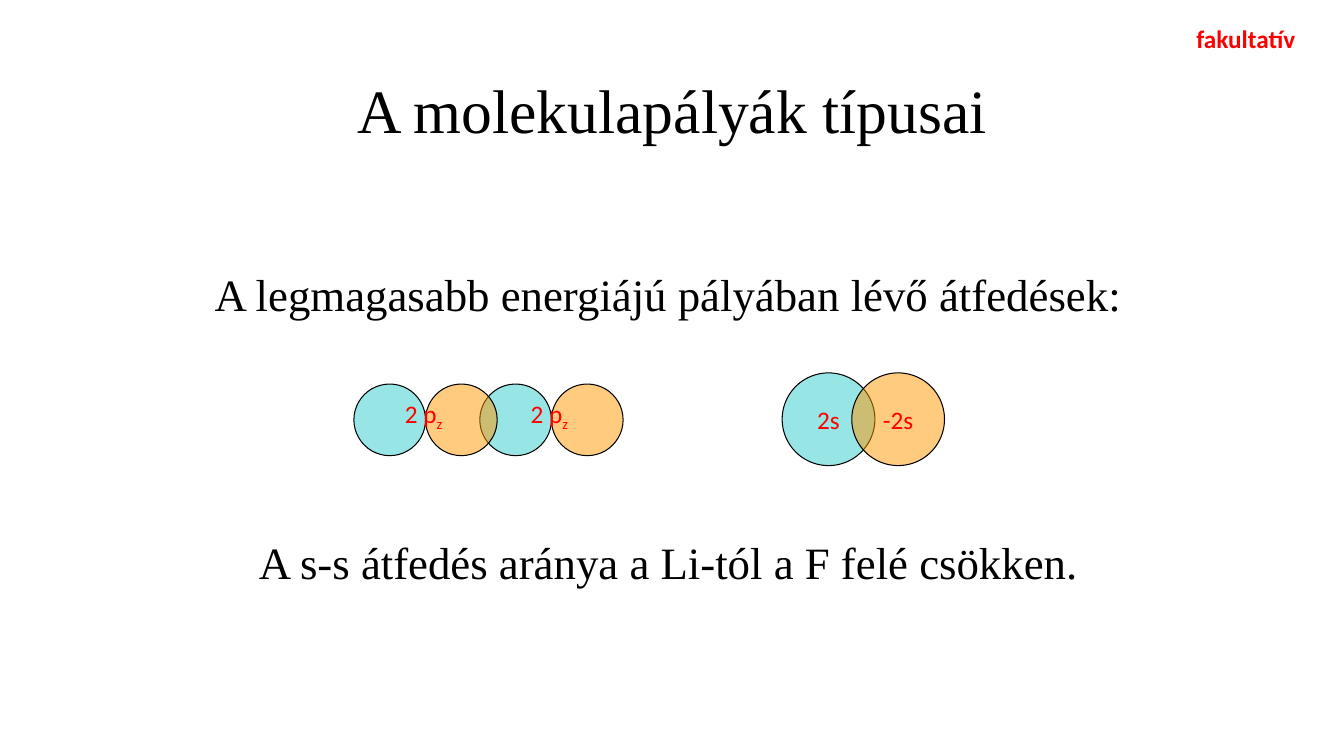
import pptx
import pptx.dml.color
import pptx.enum.shapes
import pptx.enum.text
import pptx.oxml.ns
import pptx.util
from lxml import etree

BLACK = pptx.dml.color.RGBColor(0x00, 0x00, 0x00)
RED = pptx.dml.color.RGBColor(0xFF, 0x00, 0x00)
TEAL = pptx.dml.color.RGBColor(0x33, 0xCC, 0xCC)
ORANGE = pptx.dml.color.RGBColor(0xFF, 0x99, 0x00)
ALIGN = pptx.enum.text.PP_ALIGN
ANCHOR = pptx.enum.text.MSO_ANCHOR


class OrbitalSlide:
    serif = "Times New Roman"
    sans = "Calibri"
    label_size = 18

    def __init__(self, presentation):
        self.width = presentation.slide_width
        self.height = presentation.slide_height
        self.slide = presentation.slides.add_slide(presentation.slide_layouts[5])

    def across(self, percent):
        return round(self.width * percent / 100)

    def down(self, percent):
        return round(self.height * percent / 100)

    def box(self, left, top, width, height):
        return self.across(left), self.down(top), self.across(width), self.down(height)

    def run(self, paragraph, text, font, size, color, bold=False):
        run = paragraph.add_run()
        run.text = text
        run.font.name = font
        run.font.size = pptx.util.Pt(size)
        run.font.bold = bold
        run.font.color.rgb = color
        return run

    def title(self, text, *place):
        shape = self.slide.shapes.title
        shape.left, shape.top, shape.width, shape.height = self.box(*place)
        shape.text_frame.vertical_anchor = ANCHOR.MIDDLE
        paragraph = shape.text_frame.paragraphs[0]
        paragraph.alignment = ALIGN.CENTER
        paragraph.line_spacing = 0.9
        self.run(paragraph, text, self.serif, 44, BLACK)

    def text(self, text, place, font, size, color, bold=False, shapes=None):
        shapes = shapes or self.slide.shapes
        frame = shapes.add_textbox(*self.box(*place)).text_frame
        frame.word_wrap = False
        frame.auto_size = pptx.enum.text.MSO_AUTO_SIZE.SHAPE_TO_FIT_TEXT
        paragraph = frame.paragraphs[0]
        self.run(paragraph, text, font, size, color, bold)
        return paragraph

    def statement(self, text, left, top, width):
        self.text(text, (left, top, width, 8.53), self.serif, 32, BLACK)

    def lobe(self, left, top, diameter, color, text="", shapes=None):
        shapes = shapes or self.slide.shapes
        side = self.across(diameter)
        shape = shapes.add_shape(pptx.enum.shapes.MSO_SHAPE.OVAL,
                                 self.across(left), self.down(top), side, side)
        shape.shadow.inherit = False
        shape.fill.solid()
        shape.fill.fore_color.rgb = color
        solid = shape.fill._xPr.find(pptx.oxml.ns.qn("a:solidFill"))
        etree.SubElement(solid[0], pptx.oxml.ns.qn("a:alpha"), val="50000")
        shape.line.color.rgb = BLACK
        shape.line.width = pptx.util.Pt(0.75)
        if text:
            frame = shape.text_frame
            frame.word_wrap = False
            frame.vertical_anchor = ANCHOR.MIDDLE
            paragraph = frame.paragraphs[0]
            paragraph.alignment = ALIGN.CENTER
            self.run(paragraph, text, self.sans, self.label_size, RED)

    def p_orbital(self, left, top, diameter):
        shapes = self.slide.shapes.add_group_shape().shapes
        for index, color in enumerate((TEAL, ORANGE)):
            self.lobe(left + index * diameter, top, diameter, color, shapes=shapes)
        paragraph = self.text("2 p", (left + 3.05, top + 1.2, 4.35, 5.33),
                              self.sans, self.label_size, RED, shapes=shapes)
        subscript = self.run(paragraph, "z", self.sans, self.label_size, RED)
        subscript.font._element.set("baseline", "-25000")


def main():
    presentation = pptx.Presentation()
    presentation.slide_width = pptx.util.Inches(13.33)
    presentation.slide_height = pptx.util.Inches(7.5)
    page = OrbitalSlide(presentation)
    page.title("A molekulapályák típusai", 6.9, 5.33, 86.25, 19.33)
    page.statement("A legmagasabb energiájú pályában lévő átfedések:", 15.23, 34.67, 69.68)
    page.lobe(58.2, 49.33, 6.9, TEAL, "2s")
    page.lobe(63.38, 49.33, 6.9, ORANGE, "-2s")
    page.statement("A s-s átfedés aránya a Li-tól a F felé csökken.", 18.53, 70.13, 63.08)
    for left in (35.7, 26.33):
        page.p_orbital(left, 50.8, 5.33)
    page.text("fakultatív", (88.28, 2.4, 8.93, 5.33), page.sans, page.label_size, RED, bold=True)
    presentation.save("out.pptx")


if __name__ == "__main__":
    main()
